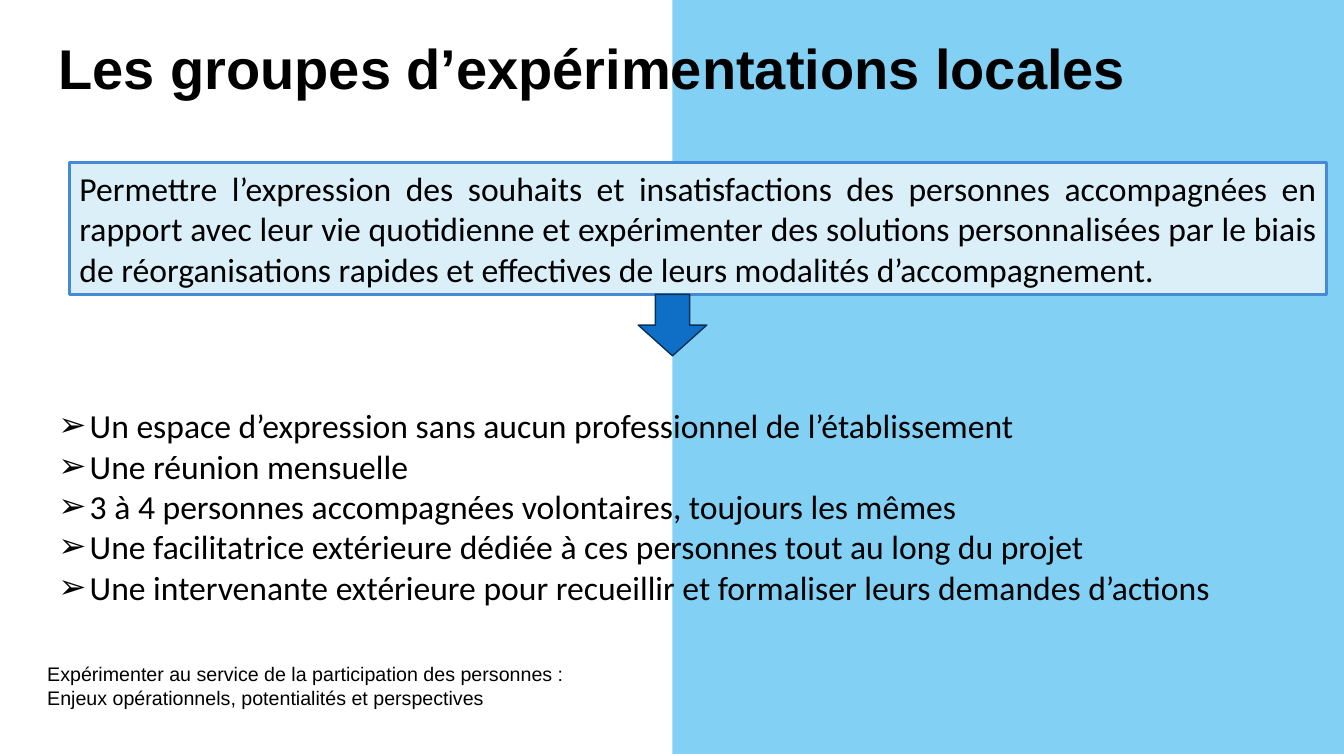
from pptx import Presentation
from pptx.dml.color import RGBColor
from pptx.enum.shapes import MSO_SHAPE
from pptx.enum.text import MSO_ANCHOR, MSO_AUTO_SIZE, PP_ALIGN
from pptx.oxml.xmlchemy import OxmlElement
from pptx.util import Inches, Pt

TITLE = "Les groupes d’expérimentations locales"
PURPOSE = (
    "Permettre l’expression des souhaits et insatisfactions des personnes accompagnées "
    "en rapport avec leur vie quotidienne et expérimenter des solutions personnalisées "
    "par le biais de réorganisations rapides et effectives de leurs modalités "
    "d’accompagnement."
)
FEATURES = [
    "Un espace d’expression sans aucun professionnel de l’établissement",
    "Une réunion mensuelle",
    "3 à 4 personnes accompagnées volontaires, toujours les mêmes",
    "Une facilitatrice extérieure dédiée à ces personnes tout au long du projet",
    "Une intervenante extérieure pour recueillir et formaliser leurs demandes d’actions",
]
FOOTER = (
    "Expérimenter au service de la participation des personnes :\n"
    "Enjeux opérationnels, potentialités et perspectives"
)


def color(hex_string):
    return RGBColor.from_string(hex_string)


def place(shape, left, top, width, height):
    shape.left, shape.top = Inches(left), Inches(top)
    shape.width, shape.height = Inches(width), Inches(height)


def format_paragraph(paragraph, font_name, size, bold=False, align=PP_ALIGN.LEFT):
    paragraph.alignment = align
    paragraph.space_before = Pt(0)
    paragraph.font.name = font_name
    paragraph.font.size = Pt(size)
    paragraph.font.bold = bold
    paragraph.font.color.rgb = color("000000")


def prepare_frame(shape, anchor=MSO_ANCHOR.TOP):
    frame = shape.text_frame
    frame.word_wrap = True
    frame.auto_size = MSO_AUTO_SIZE.NONE
    frame.vertical_anchor = anchor
    return frame


def add_panel(slide, kind, box, fill, line=None, line_width=1):
    shape = slide.shapes.add_shape(kind, *map(Inches, box))
    shape.shadow.inherit = False
    shape.fill.solid()
    shape.fill.fore_color.rgb = color(fill)
    if line:
        shape.line.color.rgb = color(line)
        shape.line.width = Pt(line_width)
    else:
        shape.line.fill.background()
    return shape


def add_bullet(paragraph, character, indent):
    properties = paragraph._p.get_or_add_pPr()
    properties.set("marL", str(Inches(indent)))
    properties.set("indent", str(-Inches(indent)))
    bullet = OxmlElement("a:buChar")
    bullet.set("char", character)
    properties.append(bullet)


def fill_title(title):
    place(title, 0.48, 0.36, 12.04, 1.45)
    paragraph = prepare_frame(title).paragraphs[0]
    paragraph.text = TITLE
    paragraph.line_spacing = 0.9
    format_paragraph(paragraph, "Arial", 40, bold=True)


def fill_list(body):
    place(body, 0.48, 3.97, 11.73, 2.12)
    frame = prepare_frame(body)
    frame.text = "\n".join(FEATURES)
    for paragraph in frame.paragraphs:
        add_bullet(paragraph, "➢", 0.31)
        format_paragraph(paragraph, "Calibri", 24)


def add_purpose(slide):
    box = add_panel(slide, MSO_SHAPE.RECTANGLE, (0.69, 1.61, 12.47, 1.31),
                    "DBEFF9", "448AD7", 2.25)
    paragraph = prepare_frame(box, MSO_ANCHOR.MIDDLE).paragraphs[0]
    paragraph.text = PURPOSE
    format_paragraph(paragraph, "Calibri", 24, align=PP_ALIGN.JUSTIFY)


def add_footer(slide):
    box = slide.shapes.add_textbox(*map(Inches, (0.37, 6.52, 5.97, 0.57)))
    paragraph = prepare_frame(box).paragraphs[0]
    paragraph.text = FOOTER
    format_paragraph(paragraph, "Arial", 14)


def main():
    presentation = Presentation()
    presentation.slide_width = Inches(13.33)
    presentation.slide_height = Inches(7.5)
    slide = presentation.slides.add_slide(presentation.slide_layouts[1])
    title, body = slide.placeholders

    half = add_panel(slide, MSO_SHAPE.RECTANGLE, (6.67, -0.02, 6.67, 7.5), "82D0F4")
    title.element.addprevious(half.element)  # behind the text
    fill_title(title)
    fill_list(body)
    add_purpose(slide)
    add_panel(slide, MSO_SHAPE.DOWN_ARROW, (6.33, 2.92, 0.68, 0.61), "0F6FC6", "073157")
    add_footer(slide)
    presentation.save("out.pptx")


if __name__ == "__main__":
    main()
